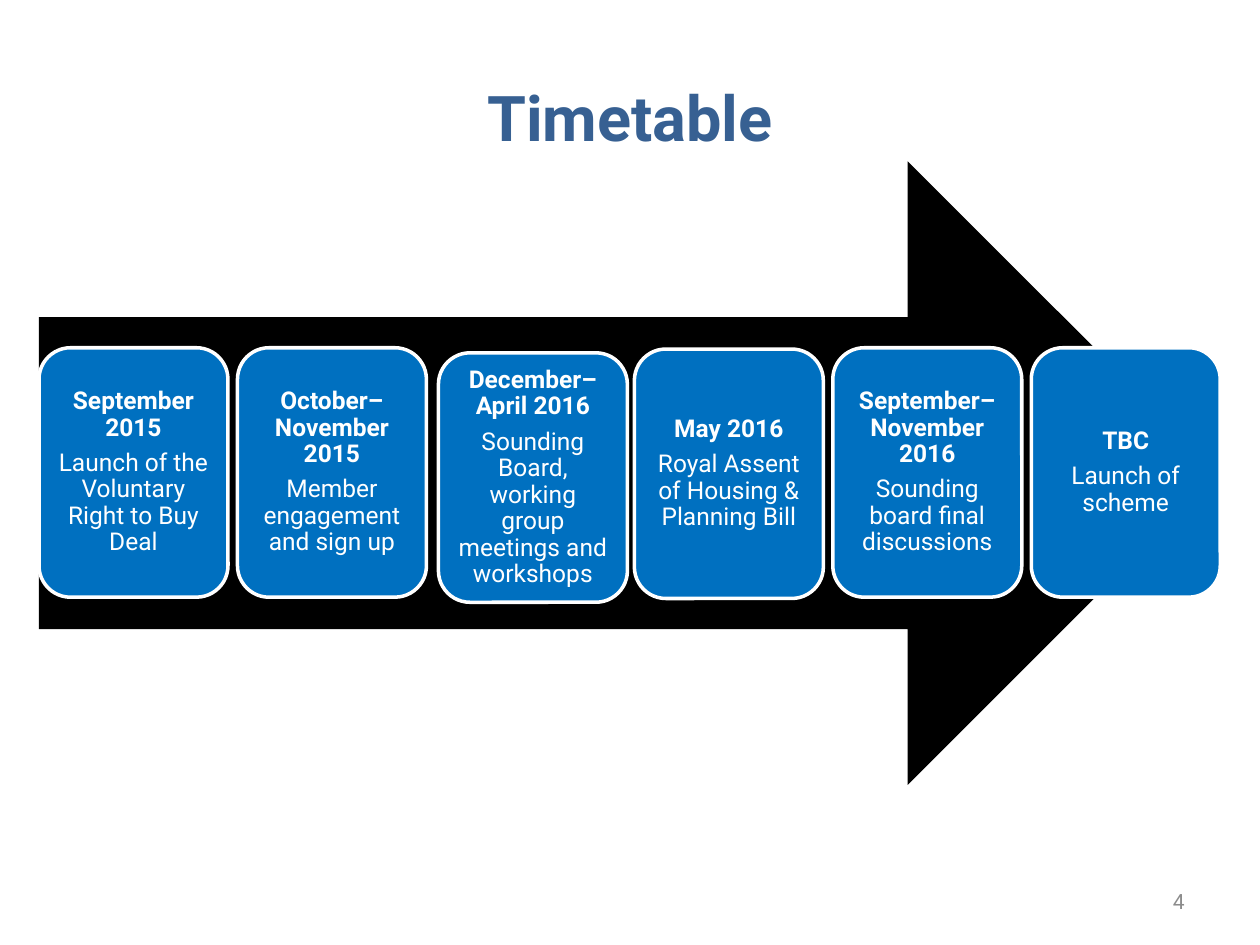
from pptx import Presentation
from pptx.dml.color import RGBColor
from pptx.enum.shapes import MSO_SHAPE
from pptx.enum.text import MSO_ANCHOR, PP_ALIGN
from pptx.util import Inches, Pt

ARROW = MSO_SHAPE.RIGHT_ARROW
ROUNDED = MSO_SHAPE.ROUNDED_RECTANGLE
MIDDLE = MSO_ANCHOR.MIDDLE
CENTER = PP_ALIGN.CENTER
RIGHT = PP_ALIGN.RIGHT

FONT = "Roboto"
TITLE_FORMAT = {"name": FONT, "size": Pt(36), "bold": True}
NUMBER_FORMAT = {"name": FONT, "size": Pt(12), "bold": False}
DATE_FORMAT = {"name": FONT, "size": Pt(14), "bold": True}
EVENT_FORMAT = {**DATE_FORMAT, "bold": False}
STAGE_SPACING = {"alignment": CENTER, "line_spacing": 0.9, "space_after": Pt(5)}

FIRST_LEFT, STAGE_TOP, STAGE_PITCH = 0.31, 2.76, 1.575
STAGE_SIZE = (1.5, 1.98)
STAGES = [
    ("September 2015", "Launch of the Voluntary Right to Buy Deal", 0, 0),
    ("October–November 2015", "Member engagement and sign up", 0, 0),
    ("December–April 2016",
     "Sounding Board, working group meetings and workshops", 0.02, 0.04),
    ("May 2016", "Royal Assent of Housing & Planning Bill", 0, 0.01),
    ("September– November 2016", "Sounding board final discussions", 0, 0),
    ("TBC", "Launch of scheme", 0, 0),
]


def color(value):
    return RGBColor.from_string(value)


def apply(target, values):
    for name, value in values.items():
        setattr(target, name, value)


def write(para, text, font_format, text_color, para_format):
    span = para.add_run()
    span.text = text
    apply(span.font, font_format)
    span.font.color.rgb = color(text_color)
    apply(para, para_format)


def place(box, left, top, width, height):
    apply(box, {"left": Inches(left), "top": Inches(top),
                "width": Inches(width), "height": Inches(height)})


def add_title(page, text):
    title = page.shapes.title
    place(title, 0.5, 0.3, 9, 1.25)
    title.text_frame.vertical_anchor = MIDDLE
    write(title.text_frame.paragraphs[0], text, TITLE_FORMAT, "376092",
          {"alignment": CENTER})


def add_page_number(page, text):
    box = page.shapes.add_textbox(
        Inches(7.17), Inches(6.95), Inches(2.33), Inches(0.4))
    apply(box.text_frame, {"word_wrap": True, "vertical_anchor": MIDDLE})
    write(box.text_frame.paragraphs[0], text, NUMBER_FORMAT, "8C8C8C",
          {"alignment": RIGHT})


def add_filled_shape(page, kind, left, top, width, height, fill):
    shape = page.shapes.add_shape(
        kind, Inches(left), Inches(top), Inches(width), Inches(height))
    shape.shadow.inherit = False
    shape.fill.solid()
    shape.fill.fore_color.rgb = color(fill)
    shape.line.fill.background()
    return shape


def add_stage(page, left, top, date, event):
    box = add_filled_shape(page, ROUNDED, left, top, *STAGE_SIZE, "0070C0")
    box.line.color.rgb = color("FFFFFF")
    box.line.width = Pt(2)
    frame = box.text_frame
    apply(frame, {"word_wrap": True, "vertical_anchor": MIDDLE})
    for side in ("left", "top", "right", "bottom"):
        setattr(frame, f"margin_{side}", Inches(0.06))
    write(frame.paragraphs[0], date, DATE_FORMAT, "FFFFFF", STAGE_SPACING)
    write(frame.add_paragraph(), event, EVENT_FORMAT, "FFFFFF", STAGE_SPACING)


def main():
    deck = Presentation()
    deck.slide_width, deck.slide_height = Inches(10), Inches(7.5)
    page = deck.slides.add_slide(deck.slide_layouts[5])
    add_title(page, "Timetable")
    add_page_number(page, "4")
    add_filled_shape(page, ARROW, 0.31, 1.28, 9.37, 4.95, "000000")
    for index, (date, event, shift_x, shift_y) in enumerate(STAGES):
        left = FIRST_LEFT + index * STAGE_PITCH + shift_x
        add_stage(page, left, STAGE_TOP + shift_y, date, event)
    deck.save("out.pptx")


if __name__ == "__main__":
    main()
